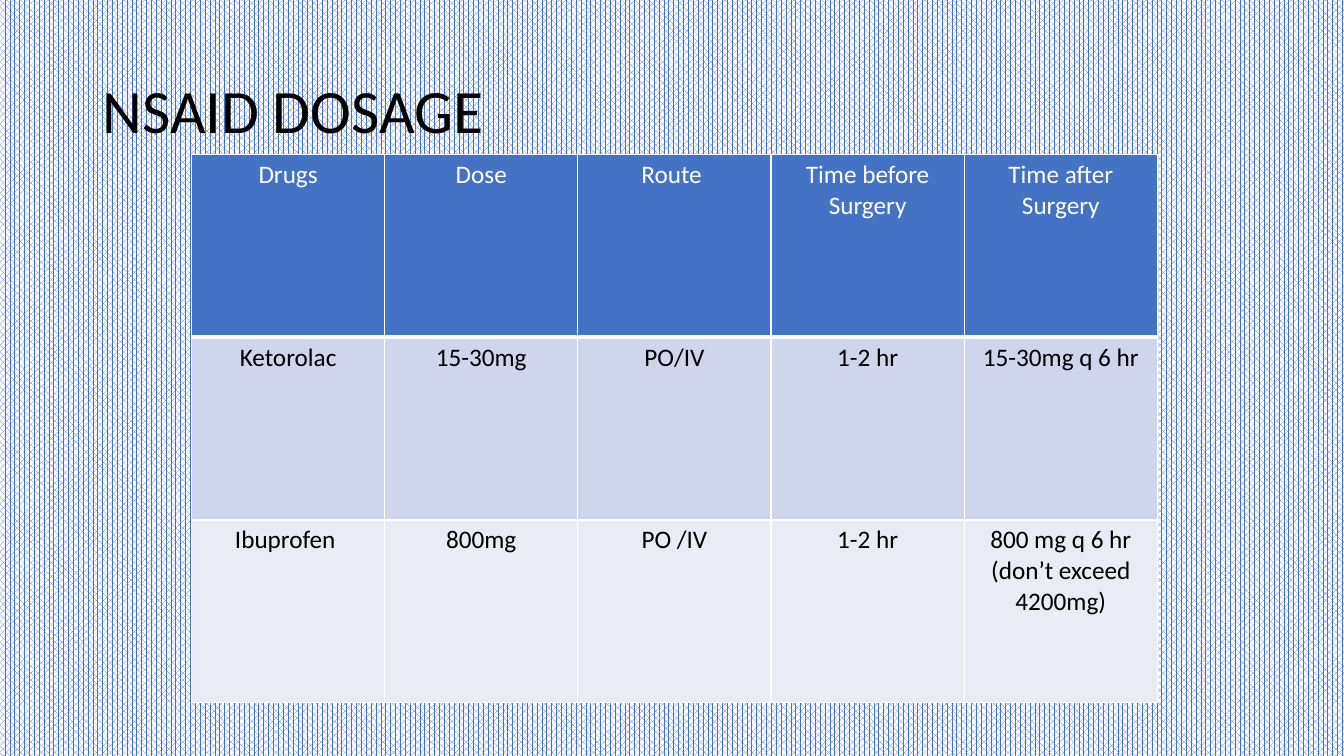
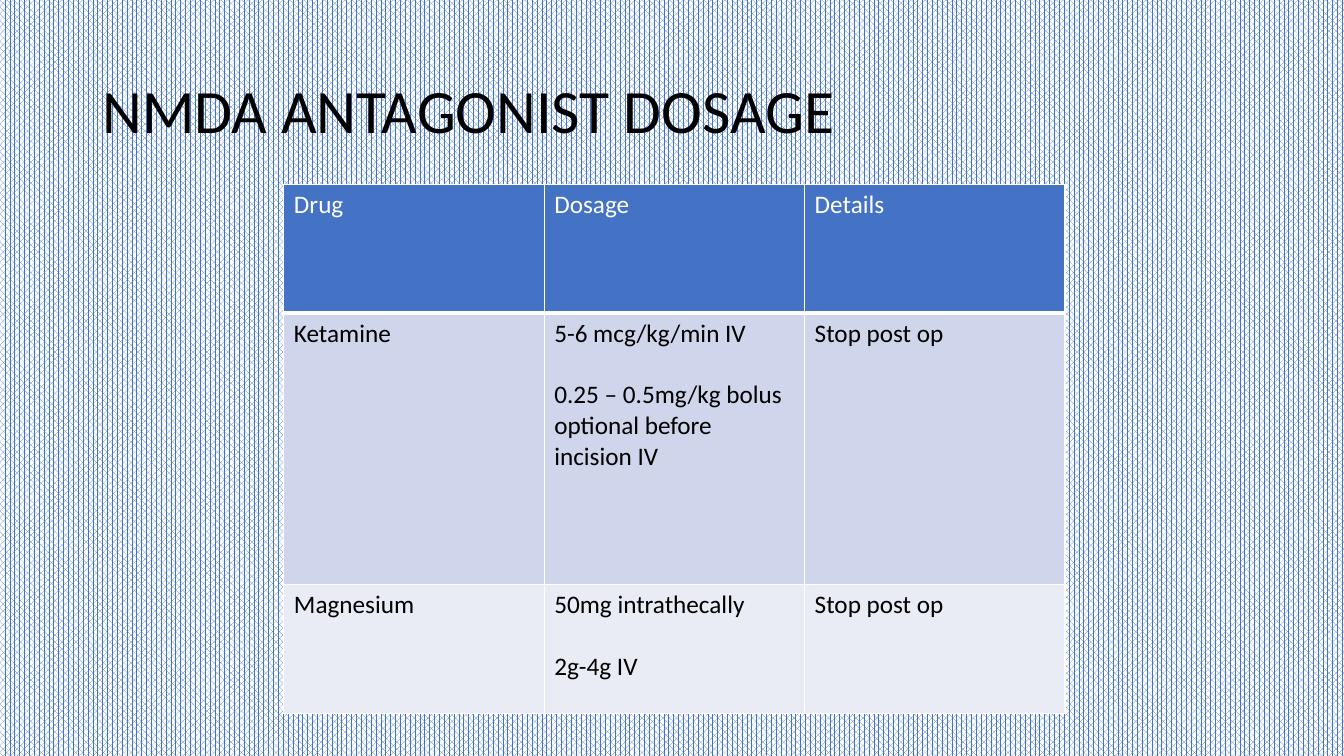
import dataclasses

import pptx
import pptx.dml.color
import pptx.enum.dml
import pptx.enum.text
import pptx.oxml
import pptx.oxml.ns
import pptx.util

COLUMNS, ROWS = 160, 90
ALIGN = pptx.enum.text.PP_ALIGN


@dataclasses.dataclass(frozen=True)
class Theme:
    """Colours, font and type sizes shared by all slides."""
    font: str = "Calibri"
    title_size: int = 44
    cell_size: int = 18
    paragraph_gap: int = 22
    black: str = "000000"
    white: str = "FFFFFF"
    accent: str = "4472C4"
    bands: tuple = ("CFD5EA", "E9EBF5")
    border: int = 1
    header_border: int = 3


THEME = Theme()


def grid(cells):
    """Convert grid cells, twelve to the inch, to a length."""
    return pptx.util.Inches(cells / 12)


def rgb(colour):
    """Return a colour object for a hex string."""
    return pptx.dml.color.RGBColor.from_string(colour)


def style_runs(p, size, colour):
    """Apply the theme font, a size and a colour to a paragraph's runs."""
    for r in p.runs:
        r.font.name = THEME.font
        r.font.size = pptx.util.Pt(size)
        r.font.color.rgb = rgb(colour)


def set_background(master):
    """Give the slide master its patterned background."""
    fill = master.background.fill
    fill.patterned()
    fill.pattern = pptx.enum.dml.MSO_PATTERN.PERCENT_70
    fill.fore_color.rgb = rgb(THEME.accent)
    fill.back_color.rgb = rgb(THEME.white)


def add_titled_slide(prs, title):
    """Add a slide with a formatted title."""
    slide = prs.slides.add_slide(prs.slide_layouts.get_by_name("Title Only"))
    sp = slide.shapes.title
    sp.left, sp.top, sp.width, sp.height = map(grid, (11, 4.8, 138, 17.4))
    tf = sp.text_frame
    tf.text = title
    tf.vertical_anchor = pptx.enum.text.MSO_ANCHOR.MIDDLE
    p = tf.paragraphs[0]
    p.alignment = ALIGN.LEFT
    p.line_spacing = 0.9
    style_runs(p, THEME.title_size, THEME.black)
    return slide


def set_borders(cell, bottom):
    """Draw white borders round a cell, with its own bottom width."""
    tc_pr = cell._tc.get_or_add_tcPr()
    widths = {"L": THEME.border, "R": THEME.border, "T": THEME.border, "B": bottom}
    for index, (side, width) in enumerate(widths.items()):
        line = pptx.oxml.parse_xml(
            f'<a:ln{side} {pptx.oxml.ns.nsdecls("a")} w="{pptx.util.Pt(width)}">'
            f'<a:solidFill><a:srgbClr val="{THEME.white}"/></a:solidFill></a:ln{side}>'
        )
        tc_pr.insert(index, line)


def fill_cell(cell, text, row, align):
    """Write and format one table cell according to its row."""
    header = row == 0
    cell.fill.solid()
    cell.fill.fore_color.rgb = rgb(THEME.accent if header else THEME.bands[(row - 1) % 2])
    set_borders(cell, THEME.header_border if header else THEME.border)
    cell.text_frame.text = text
    for index, p in enumerate(cell.text_frame.paragraphs):
        p.alignment = align
        p.space_before = pptx.util.Pt(THEME.paragraph_gap if index else 0)
        style_runs(p, THEME.cell_size, THEME.white if header else THEME.black)


def add_dosage_table(slide, left, top, column_width, row_heights, data, align):
    """Add a table with equal columns and a coloured header row."""
    count = len(data[0])
    frame = slide.shapes.add_table(
        len(data), count, grid(left), grid(top),
        grid(column_width * count), grid(sum(row_heights)),
    )
    table = frame.table
    table.first_row = table.horz_banding = False
    for column in table.columns:
        column.width = grid(column_width)
    for row, (height, texts) in enumerate(zip(row_heights, data)):
        table.rows[row].height = grid(height)
        for column, text in enumerate(texts):
            fill_cell(table.cell(row, column), text, row, align)


def main():
    """Build and save the presentation."""
    prs = pptx.Presentation()
    prs.slide_width, prs.slide_height = grid(COLUMNS), grid(ROWS)
    set_background(prs.slide_master)

    nsaid = [
        ("Drugs", "Dose", "Route ", "Time before Surgery", "Time after Surgery"),
        ("Ketorolac", "15-30mg", "PO/IV", "1-2 hr", "15-30mg q 6 hr"),
        ("Ibuprofen ", "800mg", "PO /IV", "1-2 hr", "800 mg q 6 hr (don’t exceed 4200mg)"),
    ]
    slide = add_titled_slide(prs, "NSAID DOSAGE")
    add_dosage_table(slide, 22.8, 18.4, 23, [21.75] * 3, nsaid, ALIGN.CENTER)

    nmda = [
        ("Drug", "Dosage", "Details"),
        ("Ketamine",
         "5-6 mcg/kg/min IV\n0.25 – 0.5mg/kg bolus optional before incision IV",
         "Stop post op"),
        ("Magnesium", "50mg intrathecally\n2g-4g IV", "Stop post op"),
    ]
    slide = add_titled_slide(prs, "NMDA ANTAGONIST DOSAGE")
    add_dosage_table(slide, 33.8, 22, 31, [15.3, 32.3, 15.3], nmda, ALIGN.LEFT)

    prs.save("out.pptx")


if __name__ == "__main__":
    main()
